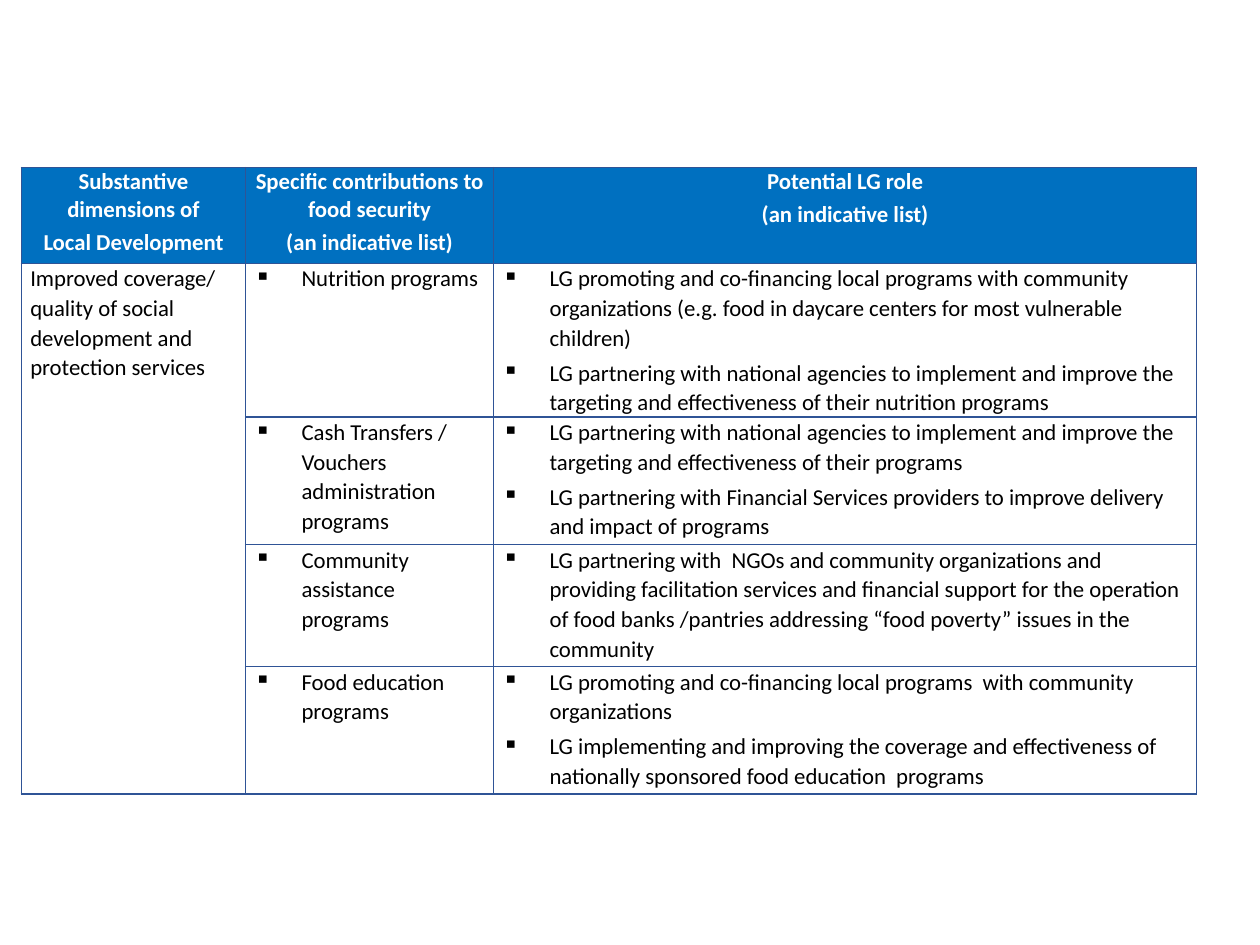
from dataclasses import dataclass

from lxml.etree import SubElement
from pptx import Presentation
from pptx.dml.color import RGBColor
from pptx.enum.text import PP_ALIGN
from pptx.oxml.ns import qn
from pptx.util import Cm, Pt


@dataclass(frozen=True)
class Theme:
    font: str = "Calibri"
    size: float = 13
    header: str = "0070C0"
    header_text: str = "FFFFFF"
    text: str = "000000"
    border: str = "2F5496"
    border_width: float = 1
    divider_width: float = 0.5


THEME = Theme()
COLUMN_WIDTHS = [4.52, 5, 14.17]
ROW_HEIGHTS = [1.93, 3.05, 2.57, 2.46, 2.57]
HEADERS = [
    ["Substantive dimensions of", "Local Development"],
    ["Specific contributions to food security", "(an indicative list)"],
    ["Potential LG role", "(an indicative list)"],
]
DIMENSION = "Improved coverage/ quality of social development and protection services"
PROGRAMS = [
    ("Nutrition programs", [
        "LG promoting and co-financing local programs with community organizations "
        "(e.g. food in daycare centers for most vulnerable children)",
        "LG partnering with national agencies to implement and improve the targeting "
        "and effectiveness of their nutrition programs",
    ]),
    ("Cash Transfers / Vouchers administration programs", [
        "LG partnering with national agencies to implement and improve the targeting "
        "and effectiveness of their programs",
        "LG partnering with Financial Services providers to improve delivery and "
        "impact of programs",
    ]),
    ("Community assistance programs", [
        "LG partnering with  NGOs and community organizations and providing "
        "facilitation services and financial support for the operation of food banks "
        "/pantries addressing “food poverty” issues in the community",
    ]),
    ("Food education programs", [
        "LG promoting and co-financing local programs  with community organizations",
        "LG implementing and improving the coverage and effectiveness of nationally "
        "sponsored food education  programs",
    ]),
]


def add_bullet(p):
    pPr = p._p.get_or_add_pPr()
    pPr.set("marL", str(Cm(0.95)))
    pPr.set("indent", str(-Cm(0.95)))
    SubElement(pPr, qn("a:buChar"), char="▪")


def set_borders(cell, col):
    tcPr = cell._tc.get_or_add_tcPr()
    dividers = {1: "R", 2: "L"}
    for side in "LRTB":
        is_divider = dividers.get(col) == side
        width = THEME.divider_width if is_divider else THEME.border_width
        ln = SubElement(tcPr, qn(f"a:ln{side}"), w=str(Pt(width)))
        fill = SubElement(ln, qn("a:solidFill"))
        SubElement(fill, qn("a:srgbClr"), val=THEME.border)


def fill_cell(cell, texts, header=False, bullets=False):
    tf = cell.text_frame
    for i, text in enumerate(texts):
        p = tf.paragraphs[0] if i == 0 else tf.add_paragraph()
        p.text = text
        if bullets:
            add_bullet(p)
        if header:
            p.alignment = PP_ALIGN.CENTER
        else:
            p.line_spacing = 1.07
        p.space_before = Pt(1 if i else 0)
        p.space_after = Pt(2)
        for r in p.runs:
            r.font.name = THEME.font
            r.font.size = Pt(THEME.size)
            r.font.bold = header
            color = THEME.header_text if header else THEME.text
            r.font.color.rgb = RGBColor.from_string(color)


def format_cell(cell, row, col):
    cell.margin_left = cell.margin_right = Cm(0.18)
    cell.margin_top = cell.margin_bottom = 0
    set_borders(cell, col)
    if row == 0:
        cell.fill.solid()
        cell.fill.fore_color.rgb = RGBColor.from_string(THEME.header)
    else:
        cell.fill.background()


def add_program_table(s):
    table = s.shapes.add_table(
        len(ROW_HEIGHTS), len(COLUMN_WIDTHS), Cm(0.43), Cm(3.38),
        Cm(sum(COLUMN_WIDTHS)), Cm(sum(ROW_HEIGHTS))).table
    for column, width in zip(table.columns, COLUMN_WIDTHS):
        column.width = Cm(width)
    for row, height in zip(table.rows, ROW_HEIGHTS):
        row.height = Cm(height)
    for i, row in enumerate(table.rows):
        for j, cell in enumerate(row.cells):
            format_cell(cell, i, j)
    table.cell(1, 0).merge(table.cell(len(PROGRAMS), 0))

    for j, texts in enumerate(HEADERS):
        fill_cell(table.cell(0, j), texts, header=True)
    fill_cell(table.cell(1, 0), [DIMENSION])
    for i, (program, roles) in enumerate(PROGRAMS, 1):
        fill_cell(table.cell(i, 1), [program], bullets=True)
        fill_cell(table.cell(i, 2), roles, bullets=True)


def main():
    prs = Presentation()
    prs.slide_width, prs.slide_height = Cm(25.4), Cm(19.05)
    s = prs.slides.add_slide(prs.slide_layouts[6])
    add_program_table(s)
    prs.save("out.pptx")


if __name__ == "__main__":
    main()
